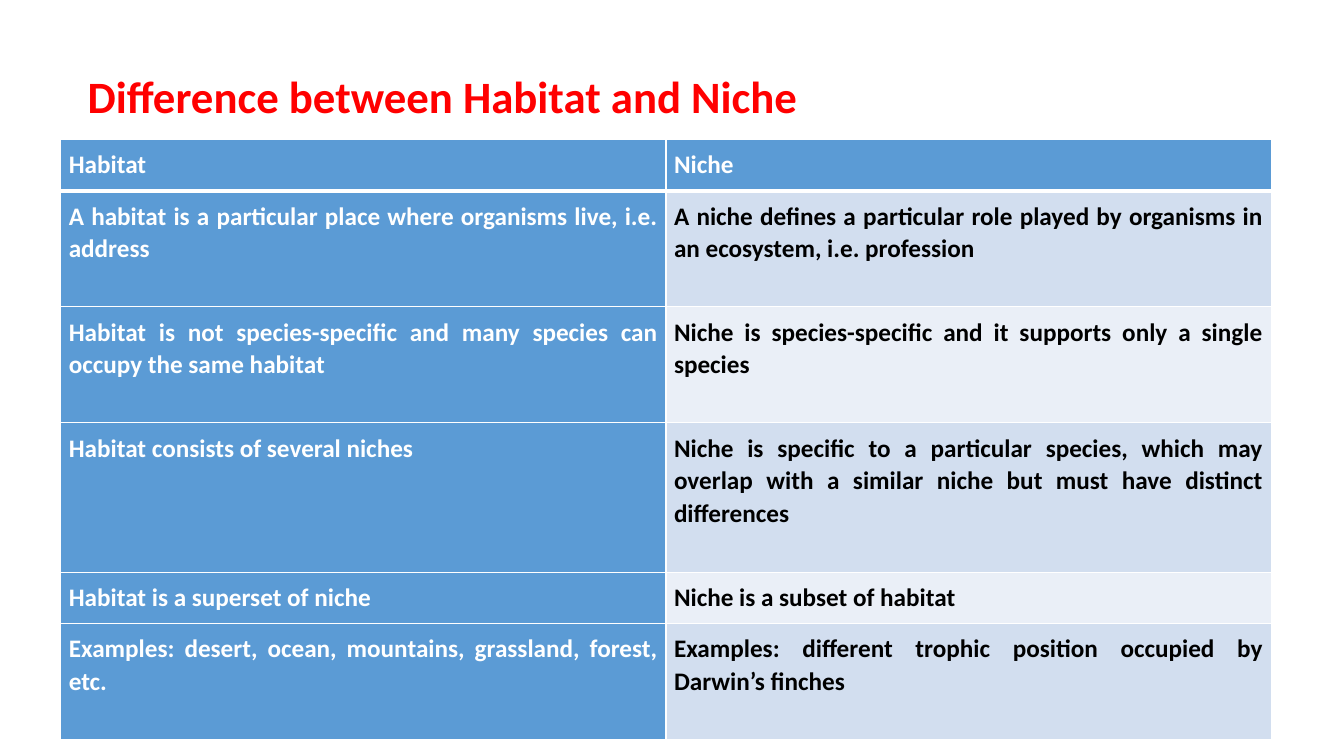
from dataclasses import dataclass

from lxml.etree import SubElement
from pptx import Presentation
from pptx.dml.color import RGBColor
from pptx.enum.text import MSO_ANCHOR, MSO_AUTO_SIZE, PP_ALIGN
from pptx.oxml.ns import qn
from pptx.slide import Slide
from pptx.table import _Cell
from pptx.text.text import _Paragraph
from pptx.util import Pt

WHITE = RGBColor(0xFF, 0xFF, 0xFF)
BLACK = RGBColor(0x00, 0x00, 0x00)
RED = RGBColor(0xFF, 0x00, 0x00)
BLUE = RGBColor(0x5B, 0x9B, 0xD5)
BAND_DARK = RGBColor(0xD2, 0xDE, 0xEF)
BAND_LIGHT = RGBColor(0xEA, 0xEF, 0xF7)

FONT = "Calibri"
COLUMN_WIDTH = 432.3
CELL_MARGIN = Pt(5.76)


@dataclass(frozen=True)
class Comparison:
    habitat: str
    niche: str
    height: float


COMPARISONS = [
    Comparison("Habitat", "Niche", 36.7),
    Comparison(
        "A habitat is a particular place where organisms live, i.e. address",
        "A niche defines a particular role played by organisms in an ecosystem, i.e. profession",
        82.9,
    ),
    Comparison(
        "Habitat is not species-specific and many species can occupy the same habitat",
        "Niche is species-specific and it supports only a single species",
        82.9,
    ),
    Comparison(
        "Habitat consists of several niches",
        "Niche is specific to a particular species, which may overlap with a similar niche "
        "but must have distinct differences",
        106.6,
    ),
    Comparison("Habitat is a superset of niche", "Niche is a subset of habitat", 36.7),
    Comparison(
        "Examples: desert, ocean, mountains, grassland, forest, etc.",
        "Examples: different trophic position occupied by Darwin’s finches",
        82.9,
    ),
]


def add_bold_run(para: _Paragraph, text: str, size: float, color: RGBColor) -> None:
    span = para.add_run()
    span.text = text
    span.font.name = FONT
    span.font.size = Pt(size)
    span.font.bold = True
    span.font.color.rgb = color


def add_borders(cell: _Cell, top: float, bottom: float) -> None:
    """Draw white cell edges; call before the fill, which must follow them."""
    properties = cell._tc.get_or_add_tcPr()
    for tag, width in (("a:lnL", 1), ("a:lnR", 1), ("a:lnT", top), ("a:lnB", bottom)):
        line = SubElement(properties, qn(tag), w=str(Pt(width)))
        fill = SubElement(line, qn("a:solidFill"))
        SubElement(fill, qn("a:srgbClr"), val=str(WHITE))


def fill_cell(cell: _Cell, text: str, row: int, column: int) -> None:
    add_borders(cell, top=3 if row == 1 else 1, bottom=3 if row == 0 else 1)
    on_blue = row == 0 or column == 0
    band = BAND_DARK if row % 2 else BAND_LIGHT
    cell.fill.solid()
    cell.fill.fore_color.rgb = BLUE if on_blue else band
    cell.margin_left = cell.margin_right = CELL_MARGIN
    cell.margin_top = cell.margin_bottom = CELL_MARGIN
    para = cell.text_frame.paragraphs[0]
    para.alignment = PP_ALIGN.JUSTIFY
    para.line_spacing = 1.07
    para.space_after = Pt(15)
    add_bold_run(para, text, 18, WHITE if on_blue else BLACK)


def add_title(page: Slide, text: str) -> None:
    box = page.shapes.title
    box.left, box.top, box.width, box.height = Pt(55.4), Pt(45.4), Pt(800.6), Pt(46)
    frame = box.text_frame
    frame.word_wrap = True
    frame.auto_size = MSO_AUTO_SIZE.NONE
    frame.vertical_anchor = MSO_ANCHOR.MIDDLE
    para = frame.paragraphs[0]
    para.alignment = PP_ALIGN.LEFT
    add_bold_run(para, text, 32, RED)


def add_comparison_table(page: Slide, comparisons: list[Comparison]) -> None:
    total_height = sum(entry.height for entry in comparisons)
    table = page.shapes.add_table(
        len(comparisons), 2, Pt(43.4), Pt(99.6), Pt(2 * COLUMN_WIDTH), Pt(total_height)
    ).table
    for column in table.columns:
        column.width = Pt(COLUMN_WIDTH)
    for row, entry in enumerate(comparisons):
        table.rows[row].height = Pt(entry.height)
        for column, text in enumerate((entry.habitat, entry.niche)):
            fill_cell(table.cell(row, column), text, row, column)


def main() -> None:
    deck = Presentation()
    deck.slide_width, deck.slide_height = Pt(960), Pt(540)
    page = deck.slides.add_slide(deck.slide_layouts.get_by_name("Title Only"))
    # Table first in content, heading above it
    add_comparison_table(page, COMPARISONS)
    add_title(page, "Difference between Habitat and Niche")
    deck.save("out.pptx")


if __name__ == "__main__":
    main()
